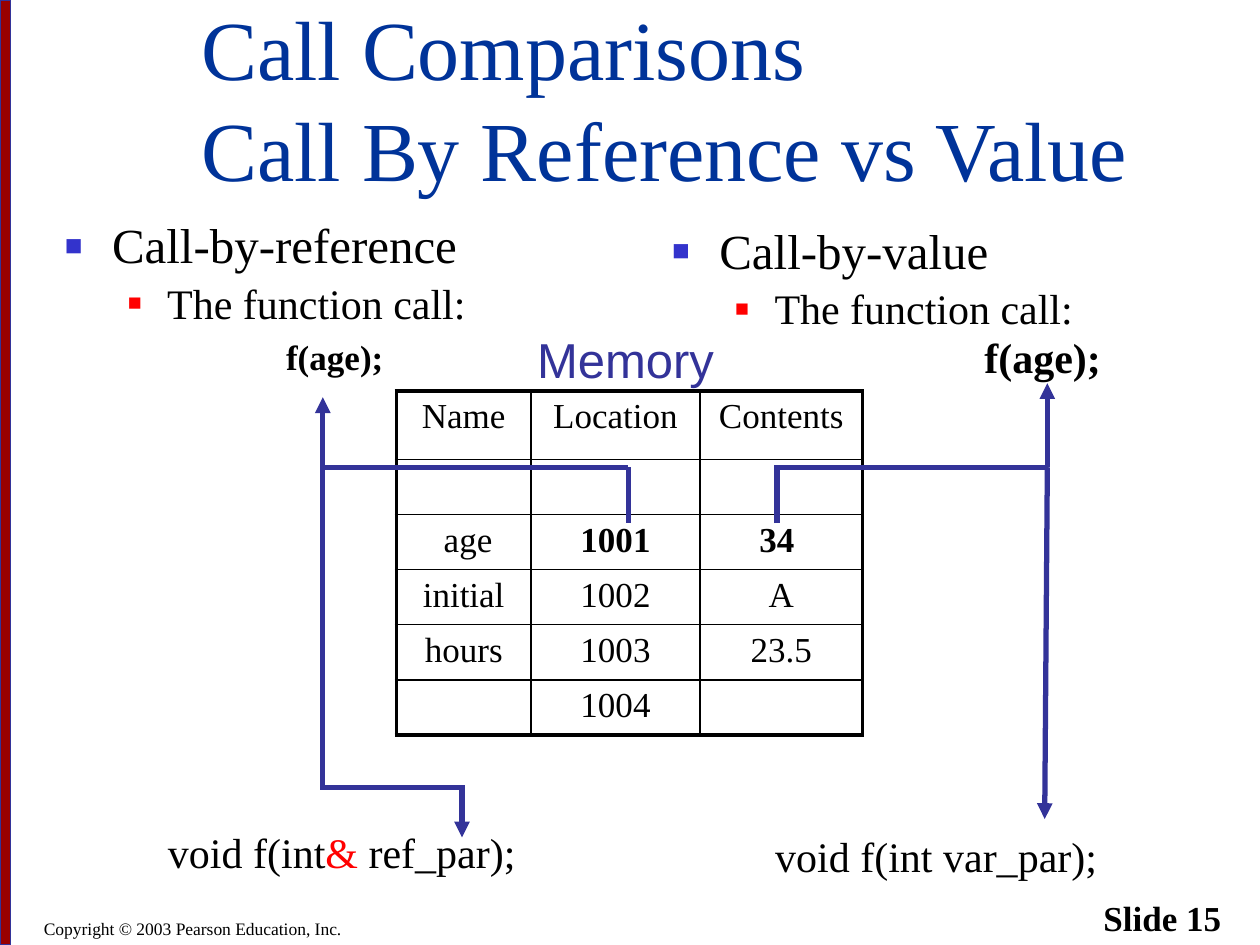
"""Build the slide comparing call-by-reference with call-by-value."""
from lxml import etree
from pptx import Presentation
from pptx import util as u
from pptx.dml.color import RGBColor
from pptx.enum import shapes, text
from pptx.oxml import ns

Pt = u.Pt
ALIGN = text.PP_ALIGN
ANCHOR = text.MSO_ANCHOR
SERIF, SANS = "Times New Roman", "Arial"
BLACK = RGBColor(0x00, 0x00, 0x00)
NAVY = RGBColor(0x00, 0x33, 0x99)
INDIGO = RGBColor(0x33, 0x33, 0x99)
BLUE = RGBColor(0x33, 0x33, 0xCC)
RED = RGBColor(0xFF, 0x00, 0x00)
MAROON = RGBColor(0x99, 0x00, 0x00)

TITLE = "Call Comparisons\vCall By Reference vs Value"
COLUMNS = [
    {"heading": "Call-by-reference", "left": 30, "top": 123,
     "call": (163.5, 191.5, 20),
     "signature": (96, 472.5), "parts": ["void f(int", "&", " ref_par);"]},
    {"heading": "Call-by-value", "left": 377, "top": 126,
     "call": (562.5, 189.5, 24),
     "signature": (443, 474.5), "parts": ["void f(int var_par);"]},
]
BULLETS = [(28, 27, -27, BLUE, 60), (24, 58.5, -22.5, RED, 55)]
MEMORY = [
    ["Name", "Location", "Contents"],
    ["", "", ""],
    [" age", "1001", "34 "],
    ["initial", "1002", "A"],
    ["hours", "1003", "23.5"],
    ["", "1004", ""],
]
BOLD_CELLS = {"1001", "34 "}
COLUMN_WIDTHS = [77, 96.5, 93]
ROW_HEIGHTS = [39] + [31.5] * 5
LINKS = [
    ((359, 267), (359, 299), False),
    ((359, 267), (184.5, 267), False),
    ((184.5, 267), (184.5, 227), True),
    ((183, 450), (265.5, 450), False),
    ((264, 451.5), (264, 478.5), True),
    ((184.5, 267), (184.5, 450), False),
    ((444, 299), (444, 267), False),
    ((442.5, 267), (597, 267), False),
    ((598.5, 267), (598.5, 219), True),
    ((598.5, 267), (597, 468), True),
]


def set_font(part, size, color=BLACK, bold=False, name=SERIF):
    font = part.font
    font.name, font.size, font.bold = name, Pt(size), bold
    font.color.rgb = color


def add_frame(slide, left, top, width, height, anchor=ANCHOR.TOP, wrap=True, inset=True):
    frame = slide.shapes.add_textbox(Pt(left), Pt(top), Pt(width), Pt(height)).text_frame
    frame.word_wrap, frame.vertical_anchor = wrap, anchor
    if not inset:
        frame.margin_left = frame.margin_top = frame.margin_right = frame.margin_bottom = 0
    return frame


def add_label(slide, box, words, size, color=BLACK, bold=False, name=SERIF,
              align=ALIGN.LEFT, **options):
    paragraph = add_frame(slide, *box, **options).paragraphs[0]
    paragraph.text, paragraph.alignment = words, align
    set_font(paragraph, size, color, bold, name)


def add_bullet(paragraph, margin, indent, color, percent):
    props = paragraph._p.get_or_add_pPr()
    props.set("marL", str(Pt(margin)))
    props.set("indent", str(Pt(indent)))
    bullet_color = etree.SubElement(props, ns.qn("a:buClr"))
    etree.SubElement(bullet_color, ns.qn("a:srgbClr"), val=str(color))
    etree.SubElement(props, ns.qn("a:buSzPct"), val=str(percent * 1000))
    etree.SubElement(props, ns.qn("a:buFont"), typeface=SANS)
    etree.SubElement(props, ns.qn("a:buChar"), char="■")


def add_column(slide, column):
    outline = add_frame(slide, column["left"], column["top"], 327, 72)
    for level, (size, margin, indent, color, percent) in enumerate(BULLETS):
        paragraph = outline.add_paragraph() if level else outline.paragraphs[0]
        paragraph.text = "The function call:" if level else column["heading"]
        paragraph.level = level
        add_bullet(paragraph, margin, indent, color, percent)
        paragraph.line_spacing = 0.9
        paragraph.space_before = Pt(4.8 * level)
        set_font(paragraph, size)
    left, top, size = column["call"]
    add_label(slide, (left, top, 80, 28), "f(age);", size, bold=True, wrap=False, inset=False)
    signature = add_frame(slide, *column["signature"], 230, 28, wrap=False, inset=False)
    for part in column["parts"]:
        run = signature.paragraphs[0].add_run()
        run.text = part
        set_font(run, 24, RED if part == "&" else BLACK)


def add_border(cell, side, width):
    props = cell._tc.get_or_add_tcPr()
    border = etree.Element(ns.qn(f"a:ln{side}"), w=str(Pt(width)))
    fill = etree.SubElement(border, ns.qn("a:solidFill"))
    etree.SubElement(fill, ns.qn("a:srgbClr"), val=str(BLACK))
    props.insert("LRTB".index(side), border)


def add_memory(slide):
    rows, columns = len(MEMORY), len(COLUMN_WIDTHS)
    table = slide.shapes.add_table(rows, columns, Pt(226.5), Pt(223.5),
                                   Pt(sum(COLUMN_WIDTHS)), Pt(sum(ROW_HEIGHTS))).table
    table.first_row = table.horz_banding = False
    for column, width in zip(table.columns, COLUMN_WIDTHS):
        column.width = Pt(width)
    for r, (row, height) in enumerate(zip(MEMORY, ROW_HEIGHTS)):
        table.rows[r].height = Pt(height)
        for c, words in enumerate(row):
            cell = table.cell(r, c)
            cell.fill.background()
            paragraph = cell.text_frame.paragraphs[0]
            paragraph.text, paragraph.alignment = words, ALIGN.CENTER
            set_font(paragraph, 20, bold=words in BOLD_CELLS)
            edges = {"L": c == 0, "R": c == columns - 1, "T": r == 0, "B": r == rows - 1}
            for side in "LRTB":
                add_border(cell, side, 2.25 if edges[side] else 1)


def add_link(slide, start, end, arrow):
    link = slide.shapes.add_connector(shapes.MSO_CONNECTOR.STRAIGHT,
                                      *(Pt(value) for value in start + end))
    link.line.color.rgb, link.line.width = INDIGO, Pt(3)
    if arrow:
        etree.SubElement(link.line._get_or_add_ln(), ns.qn("a:tailEnd"), type="triangle")
    etree.SubElement(link._element.spPr, ns.qn("a:effectLst"))


def main():
    deck = Presentation()
    deck.slide_width, deck.slide_height = Pt(720), Pt(540)
    slide = deck.slides.add_slide(deck.slide_layouts[6])

    stripe = slide.shapes.add_shape(shapes.MSO_SHAPE.RECTANGLE, 0, 0, Pt(6), Pt(540))
    stripe.shadow.inherit = False
    stripe.fill.solid()
    stripe.fill.fore_color.rgb = MAROON
    stripe.line.color.rgb, stripe.line.width = INDIGO, Pt(0.75)

    add_label(slide, (18, 504, 596, 36), "Copyright © 2003 Pearson Education, Inc.", 10,
              anchor=ANCHOR.BOTTOM)
    add_label(slide, (555, 504, 150, 36), "Slide 15", 20, bold=True, align=ALIGN.RIGHT,
              anchor=ANCHOR.BOTTOM)
    add_label(slide, (108, 6, 612, 111), TITLE, 48, NAVY, anchor=ANCHOR.BOTTOM)
    add_label(slide, (299.5, 184.5, 116, 41), "Memory", 28, INDIGO, name=SANS,
              align=ALIGN.CENTER, wrap=False)
    add_memory(slide)
    for column in COLUMNS:
        add_column(slide, column)
    for link in LINKS:
        add_link(slide, *link)
    deck.save("out.pptx")


if __name__ == "__main__":
    main()
